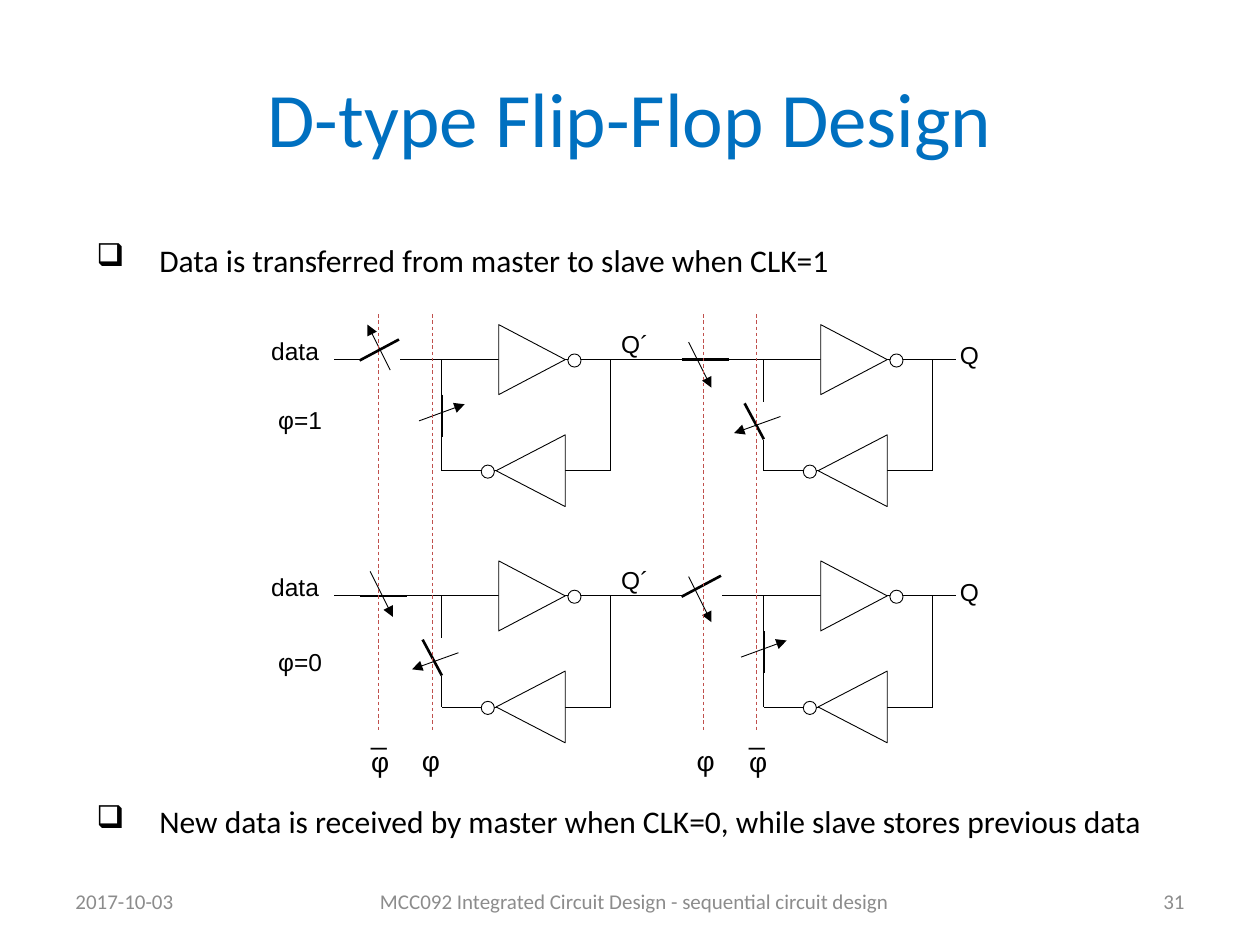
from collections import namedtuple

from lxml.etree import SubElement
from pptx import Presentation
from pptx.dml.color import RGBColor
from pptx.enum.dml import MSO_LINE_DASH_STYLE as Dash
from pptx.enum.shapes import MSO_CONNECTOR as Connector, MSO_SHAPE as Shape
from pptx.enum.text import MSO_ANCHOR as Anchor, MSO_AUTO_SIZE as AutoSize, PP_ALIGN as Align
from pptx.oxml.ns import qn
from pptx.util import Pt

BLACK = RGBColor(0x00, 0x00, 0x00)
WHITE = RGBColor(0xFF, 0xFF, 0xFF)
BLUE = RGBColor(0x00, 0x70, 0xC0)
GREY = RGBColor(0x8C, 0x8C, 0x8C)
RED = RGBColor(0xC0, 0x50, 0x4D)

THIN, BOLD = 0.5, 1.5
GAP = 21            # side of the blank square behind a switch
BUBBLE = 7.5        # diameter of an inverter's output circle
LOOP_WIDTH, LOOP_HEIGHT = 96.5, 63.5
LATCH_XS = (252.5, 436.5)
ROW_PITCH = 135
FIRST_WIRE_Y = 205.5

# Is the input closed, where its control arrow starts, and does that point up
Latch = namedtuple("Latch", "closed arrow_x arrow_y up")
Row = namedtuple("Row", "phase phase_dy latches")
ROWS = (
    Row("φ=1", 26, (Latch(False, -42.5, -20, True), Latch(True, -43, -10, False))),
    Row("φ=0", 29, (Latch(True, -41, -14, False), Latch(False, -43, -11, False))),
)


def set_values(target, values):
    for name, value in values.items():
        setattr(target, name, value)


def format_span(span, size, font, color):
    set_values(span.font, {"size": Pt(size), "name": font})
    span.font.color.rgb = color


def add_text(page, box, lines, size, font, color=BLACK, align=None, inset=None,
             anchor=Anchor.TOP, wrap=True):
    """Place one paragraph per line of text and return the paragraphs."""
    frame = page.shapes.add_textbox(*map(Pt, box)).text_frame
    set_values(frame, {"word_wrap": wrap, "vertical_anchor": anchor})
    if inset is not None:
        frame.auto_size = AutoSize.SHAPE_TO_FIT_TEXT
        for side in ("left", "top", "right", "bottom"):
            setattr(frame, f"margin_{side}", Pt(inset))
    frame.text = "\n".join(lines)
    for para in frame.paragraphs:
        para.alignment = align
        format_span(para.runs[0], size, font, color)
    return frame.paragraphs


def add_label(page, left, top, width, text):
    add_text(page, (left, top, width, 17), [text], 14, "Arial",
             align=Align.JUSTIFY, inset=0)


def add_line(page, start, end, weight=THIN, color=BLACK, arrow=False, dash=None):
    line = page.shapes.add_connector(Connector.STRAIGHT, *map(Pt, start + end))
    line.line.color.rgb = color
    set_values(line.line, {"width": Pt(weight), "dash_style": dash})
    properties = line._element.spPr
    if arrow:
        SubElement(properties.find(qn("a:ln")), qn("a:tailEnd"), type="triangle")
    SubElement(properties, qn("a:effectLst"))


def paint(shape, outline=BLACK):
    shape.shadow.inherit = False
    shape.fill.solid()
    shape.fill.fore_color.rgb = WHITE
    shape.line.color.rgb = outline
    shape.line.width = Pt(THIN)


def add_gap(page, left, top):
    paint(page.shapes.add_shape(Shape.RECTANGLE, *map(Pt, (left, top, GAP, GAP))), WHITE)


def add_inverter(page, base_x, tip_x, mid_y, half_height, bubble_x):
    points = [(Pt(x), Pt(y)) for x, y in ((tip_x, mid_y), (base_x, mid_y - half_height),
                                          (base_x, mid_y + half_height))]
    builder = page.shapes.build_freeform(*points[0], scale=1.0)
    builder.add_line_segments(points[1:], close=True)
    paint(builder.convert_to_shape())
    paint(page.shapes.add_shape(Shape.OVAL, *map(
        Pt, (bubble_x, mid_y - BUBBLE / 2 + 0.5, BUBBLE, BUBBLE))))


def add_latch(page, left, top, latch):
    """Place a latch whose feedback loop has its top left corner at left, top."""
    def at(dx, dy):
        return left + dx, top + dy

    # Feedback loop
    add_line(page, at(0, 0), at(0, LOOP_HEIGHT))
    add_line(page, at(0, LOOP_HEIGHT), at(LOOP_WIDTH, LOOP_HEIGHT))
    add_line(page, at(LOOP_WIDTH, 0), at(LOOP_WIDTH, LOOP_HEIGHT))
    add_inverter(page, left + 70.5, left + 31, top + LOOP_HEIGHT, 20.5, left + 22.5)
    add_inverter(page, left + 32.5, left + 70.5, top, 20, left + 72)

    # The feedback switch is always in the opposite state of the input switch
    add_gap(page, *at(-45, -11))
    if latch.closed:
        add_gap(page, *at(-15, 24.5))
        add_line(page, at(-47, 0), at(-20, 0), BOLD)
        add_line(page, at(0, 45.5), at(-11, 25), BOLD)
        add_line(page, at(9.5, 32.5), at(-17, 42), arrow=True)
    else:
        add_line(page, at(-47, 0.5), at(-24.5, -11.5), BOLD)
        add_line(page, at(0, 20), at(0, 44), BOLD)
        add_line(page, at(-13, 35), at(13, 25.5), arrow=True)
    ends = [at(latch.arrow_x, latch.arrow_y), at(latch.arrow_x + 13, latch.arrow_y + 26)]
    if latch.up:
        ends.reverse()
    add_line(page, *ends, arrow=True)


def add_row(page, top, row):
    """Place a master and a slave latch along the wire at height top."""
    add_line(page, (191, top), (546.5, top))
    for left, latch in zip(LATCH_XS, row.latches):
        add_latch(page, left, top, latch)
    add_label(page, 155, top - 13.5, 36, "data")
    add_label(page, 159, top + row.phase_dy, 37, row.phase)
    add_label(page, 355, top - 17.5, 20, "Q´")
    add_label(page, 548.5, top - 11, 17, "Q")


def add_clock_lines(page, top, bottom):
    clocks = ((216, -4, True), (247, -6, False), (402, -4, False), (432, -4, True))
    for x, shift, inverted in clocks:
        add_line(page, (x, top), (x, bottom), color=RED, dash=Dash.DASH)
        if inverted:
            paras = add_text(page, (x + shift, bottom - 7, 34, 34), ["_", "φ"], 16,
                             "Arial", inset=0)
            for para, spacing in zip(paras, (18, 16)):
                para.line_spacing = Pt(spacing)
        else:
            add_text(page, (x + shift, bottom + 7.5, 7.5, 17), ["φ"], 16, "Arial",
                     inset=0, wrap=False)


def add_bullet(page, box, text):
    para, = add_text(page, box, [text], 18, "Calibri")
    properties = para._p.get_or_add_pPr()
    set_values(para, {"space_before": Pt(3.6)})
    properties.set("marL", str(Pt(36)))
    properties.set("indent", str(-Pt(36)))
    SubElement(properties, qn("a:buChar"), char="❑")


def add_title(page, box, text):
    title = page.shapes.title
    set_values(title, dict(zip(("left", "top", "width", "height"), map(Pt, box))))
    title.text_frame.text = text
    title.text_frame.vertical_anchor = Anchor.MIDDLE
    para = title.text_frame.paragraphs[0]
    para.alignment = Align.CENTER
    format_span(para.runs[0], 44, "Calibri", BLUE)


def add_footer(page, top, height):
    for left, width, align, text in (
        (36, 168, Align.LEFT, "2017-10-03"),
        (206.5, 312, Align.CENTER,
         "MCC092 Integrated Circuit Design - sequential circuit design"),
        (516, 168, Align.RIGHT, "31"),
    ):
        add_text(page, (left, top, width, height), [text], 12, "Calibri", GREY, align,
                 anchor=Anchor.MIDDLE)


def main():
    deck = Presentation()
    set_values(deck, {"slide_width": Pt(720), "slide_height": Pt(540)})
    page = deck.slides.add_slide(deck.slide_layouts[5])
    add_title(page, (36, 21.6, 648, 90), "D-type Flip-Flop Design")
    add_bullet(page, (48, 134, 612, 42), "Data is transferred from master to slave when CLK=1")
    for index, row in enumerate(ROWS):
        add_row(page, FIRST_WIRE_Y + index * ROW_PITCH, row)
    add_clock_lines(page, 179.5, 417.5)
    add_bullet(page, (48, 455, 635, 42),
               "New data is received by master when CLK=0, while slave stores previous data")
    add_footer(page, 500.5, 29)
    deck.save("out.pptx")


if __name__ == "__main__":
    main()
